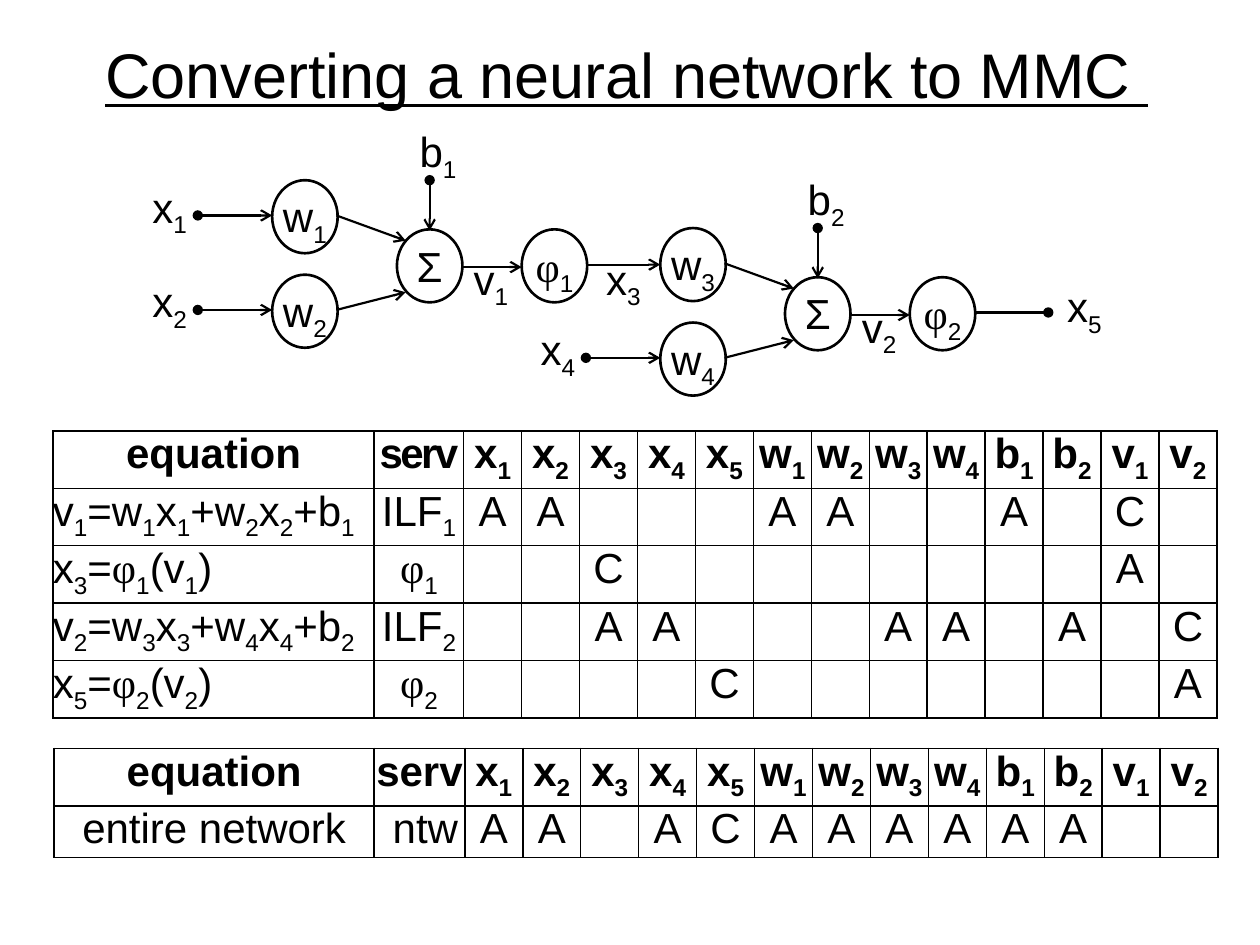
from lxml import etree
from pptx import Presentation
from pptx.dml.color import RGBColor
from pptx.enum.shapes import MSO_CONNECTOR, MSO_SHAPE
from pptx.enum.text import MSO_ANCHOR, PP_ALIGN
from pptx.oxml.ns import qn
from pptx.util import Inches, Pt

ELLIPSE = MSO_SHAPE.OVAL
STRAIGHT = MSO_CONNECTOR.STRAIGHT
TOP, MIDDLE = MSO_ANCHOR.TOP, MSO_ANCHOR.MIDDLE
LEFT, CENTER = PP_ALIGN.LEFT, PP_ALIGN.CENTER
COLORS = {"ink": "000000"}
SIDES = ("a:lnL", "a:lnR", "a:lnT", "a:lnB")

SYMBOLS = "x1 x2 x3 x4 x5 w1 w2 w3 w4 b1 b2 v1 v2".split()
HEADER = ["equation", "serv"] + [f"{name[0]}_{name[1]}" for name in SYMBOLS]
# Each row: equation, service, symbols it takes as arguments, symbol it computes
EQUATIONS = [
    ("v_1=w_1x_1+w_2x_2+b_1", "ILF_1", "x1 x2 w1 w2 b1", "v1"),
    ("x_3=φ_1(v_1)", "φ_1", "v1", "x3"),
    ("v_2=w_3x_3+w_4x_4+b_2", "ILF_2", "x3 x4 w3 w4 b2", "v2"),
    ("x_5=φ_2(v_2)", "φ_2", "v2", "x5"),
]
NETWORK = [("entire network", " ntw", "x1 x2 x4 w1 w2 w3 w4 b1 b2", "x5")]


def split_marks(text):
    """Split text into (piece, font, is_subscript); "_" lowers the next character."""
    pieces = []
    plain = ""
    chars = iter(text)
    for char in chars:
        if char in "_φ":
            if plain:
                pieces.append((plain, "Arial", False))
                plain = ""
            if char == "_":
                pieces.append((next(chars), "Arial", True))
            else:
                pieces.append((char, "Times New Roman", False))
        else:
            plain += char
    if plain:
        pieces.append((plain, "Arial", False))
    return pieces


class Painter:
    """Holds the text and line style and the page being drawn."""

    def __init__(self, page):
        self.page = page
        self.ink = RGBColor.from_string(COLORS["ink"])

    def put_text(self, frame, text, align=LEFT, size=24, bold=False, underline=False):
        para = frame.paragraphs[0]
        para.alignment = align
        for piece, font, lowered in split_marks(text):
            span = para.add_run()
            span.text = piece
            span.font.name = font
            span.font.size = Pt(size)
            span.font.bold = bold
            span.font.underline = underline
            span.font.color.rgb = self.ink
            if lowered:
                span.font._element.set("baseline", "-25000")

    def clear_margins(self, holder):
        holder.margin_left = holder.margin_right = 0
        holder.margin_top = holder.margin_bottom = 0

    def title(self, text, x, y, width, height):
        box = self.page.shapes.add_textbox(*map(Inches, (x, y, width, height)))
        box.text_frame.word_wrap = True
        box.text_frame.vertical_anchor = MIDDLE
        self.put_text(box.text_frame, text, CENTER, size=36, underline=True)

    def label(self, text, x, y):
        box = self.page.shapes.add_textbox(*map(Inches, (x, y, 0.42, 0.5)))
        box.text_frame.word_wrap = True
        self.clear_margins(box.text_frame)
        self.put_text(box.text_frame, text)

    def node(self, text, x, y):
        shape = self.page.shapes.add_shape(ELLIPSE, *map(Inches, (x, y, 0.52, 0.58)))
        shape.shadow.inherit = False
        shape.fill.background()
        shape.line.color.rgb = self.ink
        shape.line.width = Pt(1.5)
        shape.text_frame.word_wrap = False
        shape.text_frame.vertical_anchor = TOP
        self.clear_margins(shape.text_frame)
        self.put_text(shape.text_frame, text, CENTER)

    def link(self, x1, y1, x2, y2, head=None, tail="arrow"):
        line = self.page.shapes.add_connector(STRAIGHT, *map(Inches, (x1, y1, x2, y2)))
        line.line.color.rgb = self.ink
        line.line.width = Pt(1.25)
        outline = line.line._get_or_add_ln()
        for tag, kind in (("a:headEnd", head), ("a:tailEnd", tail)):
            if kind:
                etree.SubElement(outline, qn(tag)).set("type", kind)
        etree.SubElement(line._element.spPr, qn("a:effectLst"))

    def neuron(self, dx, dy, weights, inputs, number):
        """Draw weights, sum, bias and activation, moved by (dx, dy) from the first neuron."""
        for row, weight in enumerate(weights):
            self.node(weight, 2.16 + dx, 1.43 + dy + 0.75 * row)
        for row, name in inputs:
            y = dy + 0.75 * row
            self.link(1.57 + dx, 1.71 + y, 2.16 + dx, 1.71 + y, head="oval")
            self.label(name, 1.21 + dx, 1.44 + y)
        self.link(2.67 + dx, 1.71 + dy, 3.22 + dx, 1.91 + dy)
        self.link(2.67 + dx, 2.46 + dy, 3.22 + dx, 2.32 + dy)
        self.node("Σ", 3.15 + dx, 1.82 + dy)
        self.link(3.41 + dx, 1.43 + dy, 3.41 + dx, 1.83 + dy, head="oval")
        self.label(f"b_{number}", 3.33 + dx, 1 + dy)
        self.link(3.66 + dx, 2.12 + dy, 4.14 + dx, 2.12 + dy)
        self.label(f"v_{number}", 3.76 + dx, 2.01 + dy)
        self.node(f"φ_{number}", 4.14 + dx, 1.82 + dy)

    def border(self, cell):
        properties = cell._tc.get_or_add_tcPr()
        for position, side in enumerate(SIDES):
            edge = etree.Element(qn(side), w=str(Pt(1)))
            fill = etree.SubElement(edge, qn("a:solidFill"))
            etree.SubElement(fill, qn("a:srgbClr"), val=COLORS["ink"])
            properties.insert(position, edge)

    def table(self, x, y, first_widths, rows, equation_align):
        """Draw the header and one row per equation: A for arguments, C for the result."""
        grid = [HEADER]
        for equation, service, arguments, result in rows:
            marks = dict.fromkeys(arguments.split(), "A")
            marks[result] = "C"
            grid.append([equation, service] + [marks.get(name, "") for name in SYMBOLS])
        widths = list(first_widths) + [0.46] * len(SYMBOLS)
        frame = self.page.shapes.add_table(
            len(grid), len(widths), Inches(x), Inches(y),
            Inches(sum(widths)), Inches(0.41 * len(grid)))
        table = frame.table
        table.first_row = table.horz_banding = False
        for column, width in zip(table.columns, widths):
            column.width = Inches(width)
        for r, texts in enumerate(grid):
            table.rows[r].height = Inches(0.41)
            for c, text in enumerate(texts):
                cell = table.cell(r, c)
                cell.fill.background()
                self.clear_margins(cell)
                self.border(cell)
                align = equation_align if r and c == 0 else CENTER
                self.put_text(cell.text_frame, text, align, bold=r == 0)
        return table


def main():
    deck = Presentation()
    deck.slide_width, deck.slide_height = Inches(10), Inches(7.5)
    painter = Painter(deck.slides.add_slide(deck.slide_layouts[6]))

    painter.title("Converting a neural network to MMC ", 0.39, 0.25, 9.17, 0.67)

    painter.neuron(0, 0, ["w_1", "w_2"], [(0, "x_1"), (1, "x_2")], 1)
    painter.link(4.66, 2.1, 5.24, 2.1)
    painter.label("x_3", 4.81, 2.01)
    painter.neuron(3.08, 0.38, ["w_3", "w_4"], [(1, "x_4")], 2)
    painter.link(7.74, 2.48, 8.32, 2.48, tail="oval")
    painter.label("x_5", 8.47, 2.23)

    equations = painter.table(0.42, 3.42, (2.55, 0.71), EQUATIONS, LEFT)
    service_title = equations.cell(0, 1).text_frame.paragraphs[0].runs[0]
    service_title.font._element.set("spc", "-150")
    painter.table(0.43, 5.94, (2.54, 0.72), NETWORK, CENTER)

    deck.save("out.pptx")


if __name__ == "__main__":
    main()
